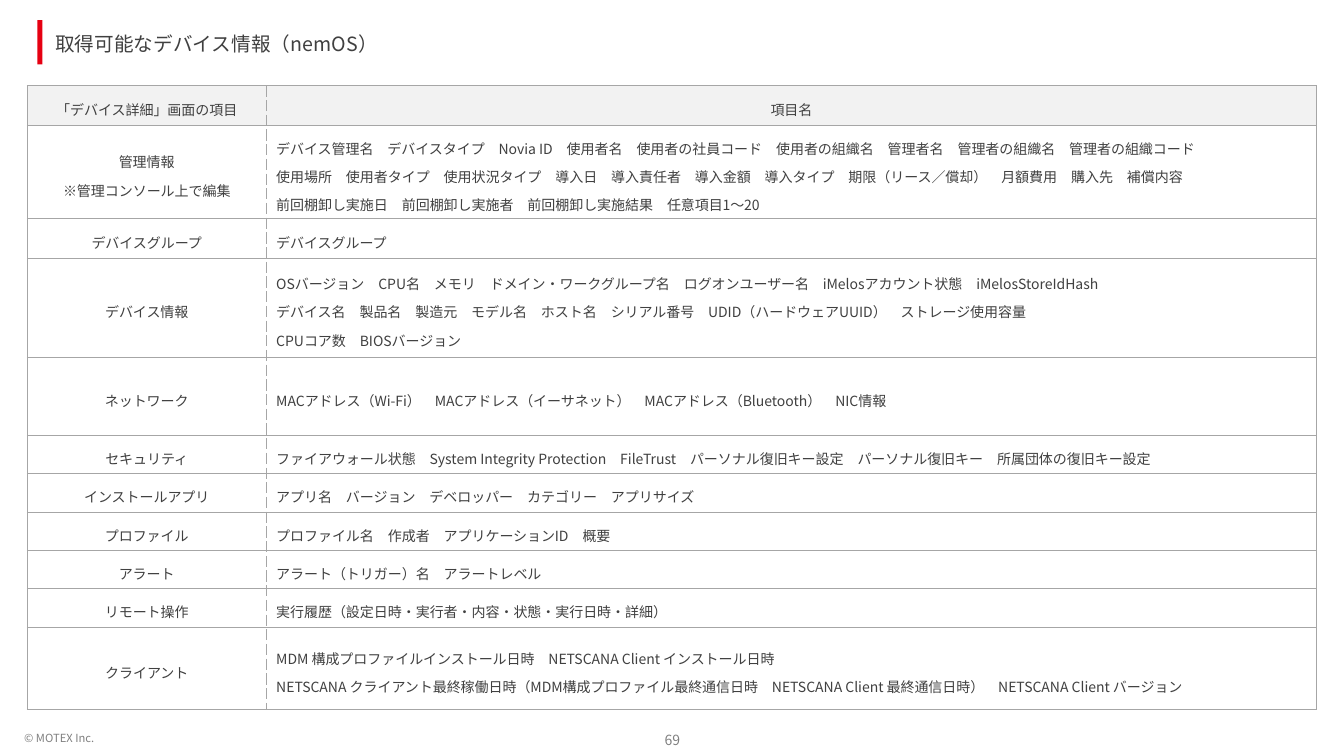
import pptx
import pptx.dml.color
import pptx.enum.shapes
import pptx.enum.text
import pptx.oxml
import pptx.oxml.ns
import pptx.util

Inches = pptx.util.Inches
ALIGN = pptx.enum.text.PP_ALIGN
ANCHOR = pptx.enum.text.MSO_ANCHOR
FONT = "Noto Sans CJK JP"
DARK, GRAY, BORDER, HEADER_FILL, RED = "404040", "808080", "A6A6A6", "F2F2F2", "E60012"
COLUMN_WIDTHS = [2.37, 10.42]
HEADINGS = ("「デバイス詳細」画面の項目", "項目名")
DEVICE_ITEMS = [
    (0.93, ["管理情報", "※管理コンソール上で編集"], [
        "デバイス管理名　デバイスタイプ　Novia ID　使用者名　使用者の社員コード　使用者の組織名　管理者名　管理者の組織名　管理者の組織コード",
        "使用場所　使用者タイプ　使用状況タイプ　導入日　導入責任者　導入金額　導入タイプ　期限（リース／償却）　月額費用　購入先　補償内容",
        "前回棚卸し実施日　前回棚卸し実施者　前回棚卸し実施結果　任意項目1～20"]),
    (0.39, ["デバイスグループ"], ["デバイスグループ"]),
    (0.99, ["デバイス情報"], [
        "OSバージョン　CPU名　メモリ　ドメイン・ワークグループ名　ログオンユーザー名　iMelosアカウント状態　iMelosStoreIdHash",
        "デバイス名　製品名　製造元　モデル名　ホスト名　シリアル番号　UDID（ハードウェアUUID）　ストレージ使用容量",
        "CPUコア数　BIOSバージョン"]),
    (0.77, ["ネットワーク"], [
        "MACアドレス（Wi-Fi）　MACアドレス（イーサネット）　MACアドレス（Bluetooth）　NIC情報"]),
    (0.38, ["セキュリティ"], [
        "ファイアウォール状態　System Integrity Protection　FileTrust　パーソナル復旧キー設定　パーソナル復旧キー　所属団体の復旧キー設定"]),
    (0.38, ["インストールアプリ"], ["アプリ名　バージョン　デベロッパー　カテゴリー　アプリサイズ"]),
    (0.38, ["プロファイル"], ["プロファイル名　作成者　アプリケーションID　概要"]),
    (0.38, ["アラート"], ["アラート（トリガー）名　アラートレベル"]),
    (0.38, ["リモート操作"], ["実行履歴（設定日時・実行者・内容・状態・実行日時・詳細）"]),
    (0.82, ["クライアント"], [
        "MDM 構成プロファイルインストール日時　NETSCANA Client インストール日時",
        "NETSCANA クライアント最終稼働日時（MDM構成プロファイル最終通信日時　NETSCANA Client 最終通信日時）　NETSCANA Client バージョン"]),
]


def rgb(color):
    """Turn a hex string into a colour."""
    return pptx.dml.color.RGBColor.from_string(color)


def write_text(text_frame, lines, size=10, color=DARK, align=ALIGN.LEFT, spacing=1.0):
    """Write lines as formatted paragraphs."""
    for index, line in enumerate(lines):
        paragraph = text_frame.add_paragraph() if index else text_frame.paragraphs[0]
        paragraph.alignment = align
        paragraph.line_spacing = spacing
        run = paragraph.add_run()
        run.text = line
        run.font.name = FONT
        run.font.size = pptx.util.Pt(size)
        run.font.bold = False
        run.font.color.rgb = rgb(color)
        east_asian = pptx.oxml.parse_xml(
            f'<a:ea {pptx.oxml.ns.nsdecls("a")} typeface="{FONT}"/>')
        run.font._element.append(east_asian)


def add_text(slide, left, top, width, height, text, **text_format):
    """Add a wrapped text box."""
    text_box = slide.shapes.add_textbox(Inches(left), Inches(top), Inches(width), Inches(height))
    text_box.text_frame.word_wrap = True
    write_text(text_box.text_frame, [text], **text_format)


def set_borders(cell, dashed_side):
    """Draw thin cell borders with one dashed side."""
    properties = cell._tc.get_or_add_tcPr()
    for side in "LRTB":
        dash = "dash" if side == dashed_side else "solid"
        properties.append(pptx.oxml.parse_xml(
            f'<a:ln{side} {pptx.oxml.ns.nsdecls("a")} w="6350"><a:solidFill>'
            f'<a:srgbClr val="{BORDER}"/></a:solidFill><a:prstDash val="{dash}"/></a:ln{side}>'))


def add_title(slide, left, top, width, height):
    """Add the red bar and the title beside it."""
    bar = slide.shapes.add_shape(pptx.enum.shapes.MSO_SHAPE.RECTANGLE,
                                 Inches(left), Inches(top), Inches(0.05), Inches(height))
    bar.shadow.inherit = False
    bar.fill.solid()
    bar.fill.fore_color.rgb = rgb(RED)
    bar.line.fill.background()
    add_text(slide, left + 0.08, top + 0.09, width - 0.08, 0.32,
             "取得可能なデバイス情報（nemOS）", size=14, spacing=0.9)


def add_item_table(slide, left, top):
    """Add the table of device items."""
    rows = [(0.39, [HEADINGS[0]], [HEADINGS[1]])] + DEVICE_ITEMS
    frame = slide.shapes.add_table(len(rows), 2, Inches(left), Inches(top),
                                   Inches(sum(COLUMN_WIDTHS)), Inches(sum(row[0] for row in rows)))
    table = frame.table
    table.first_row = False
    table.horz_banding = False
    for column, width in zip(table.columns, COLUMN_WIDTHS):
        column.width = Inches(width)
    for row_index, (height, *contents) in enumerate(rows):
        table.rows[row_index].height = Inches(height)
        for column_index, lines in enumerate(contents):
            cell = table.cell(row_index, column_index)
            set_borders(cell, "L" if column_index else "R")
            cell.vertical_anchor = ANCHOR.MIDDLE
            if row_index:
                cell.fill.background()
            else:
                cell.fill.solid()
                cell.fill.fore_color.rgb = rgb(HEADER_FILL)
            body_align = ALIGN.JUSTIFY if row_index > 2 else ALIGN.LEFT
            align = body_align if row_index and column_index else ALIGN.CENTER
            write_text(cell.text_frame, lines, align=align, spacing=1.4)


def add_footer(slide, left, top):
    """Add the copyright line and the page number."""
    add_text(slide, left, top, 4.48, 0.24, "© MOTEX Inc.", size=8, color=GRAY)
    add_text(slide, left + 6.03, top, 1, 0.3, "69", color=GRAY, align=ALIGN.CENTER)


def main():
    """Build and save the slide."""
    presentation = pptx.Presentation()
    presentation.slide_width = Inches(13.33)
    presentation.slide_height = Inches(7.5)
    slide = presentation.slides.add_slide(presentation.slide_layouts[6])
    add_footer(slide, 0.14, 7.21)
    add_title(slide, 0.37, 0.2, 12.19, 0.44)
    add_item_table(slide, 0.27, 0.85)
    presentation.save("out.pptx")


if __name__ == "__main__":
    main()
